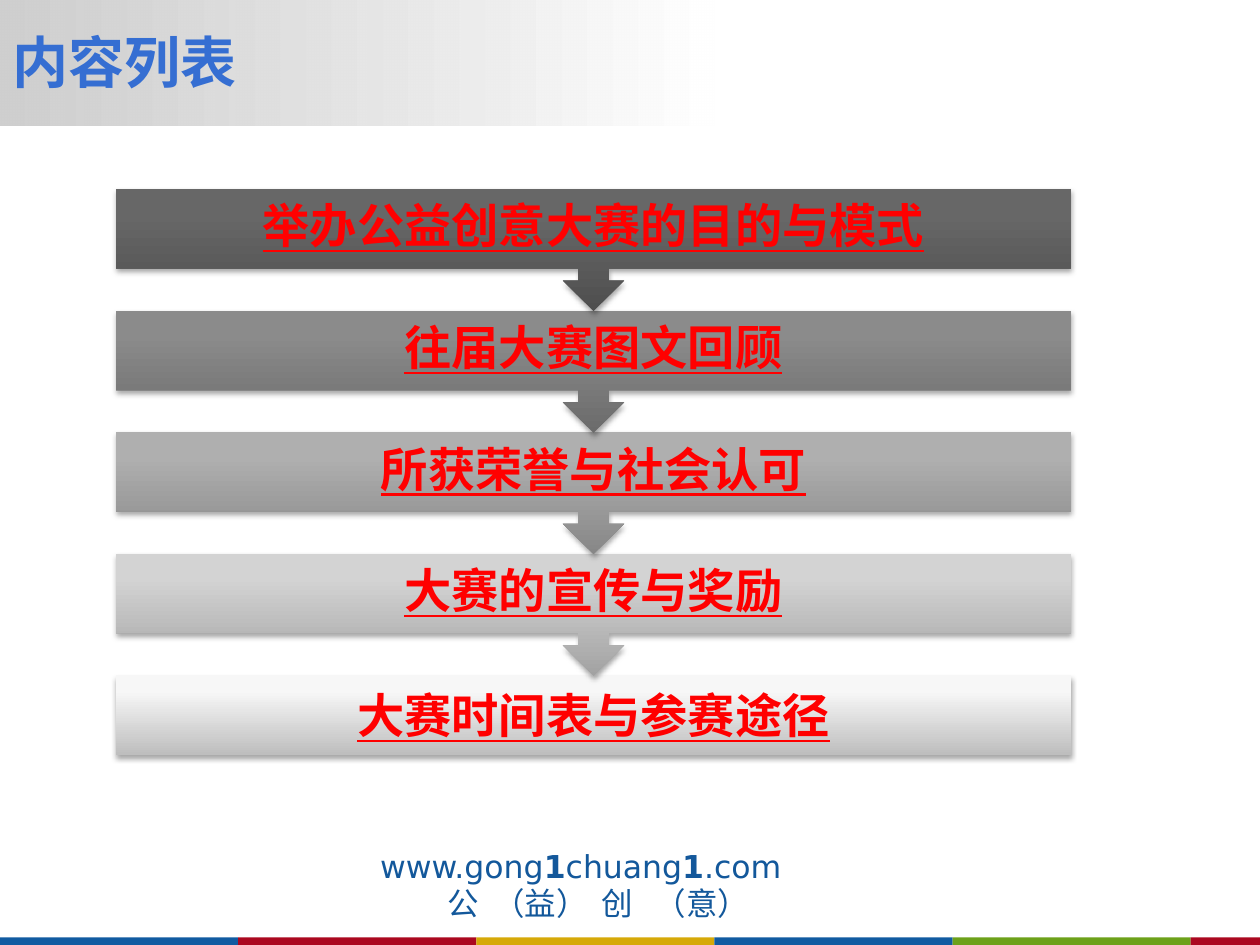
from dataclasses import dataclass

import pptx
import pptx.dml.color
import pptx.enum.shapes
import pptx.enum.text
import pptx.oxml
import pptx.oxml.ns
import pptx.util
from pptx.util import Inches

COLORS = {
    "blue": "115BA1", "red": "AB0820", "gold": "D6A908", "green": "6DA11A",
    "title": "356ED2", "topic": "FF0000", "footer": "13589B",
    "band": "C7C7C7", "white": "FFFFFF", "shadow": "000000",
}
CJK_FONT = "Noto Sans CJK SC"
NAMESPACE = pptx.oxml.ns.nsdecls("a")
SHAPE = pptx.enum.shapes.MSO_SHAPE
ALIGN = pptx.enum.text.PP_ALIGN
ANCHOR = pptx.enum.text.MSO_ANCHOR

TOPIC_LEFT, TOPIC_TOP, TOPIC_WIDTH = 0.92, 1.5, 7.58
TOPIC_PITCH = 0.965
BOX_HEIGHT, CALLOUT_HEIGHT = 0.63, 0.97
STRIPE_WIDTH = 1.89


@dataclass
class Topic:
    text: str
    dark: str
    middle: str
    light: str


@dataclass
class Span:
    text: str
    bold: bool = False
    spacing: int = 0  # hundredths of a point


TOPICS = [
    Topic("举办公益创意大赛的目的与模式", "4F4F4F", "676767", "676767"),
    Topic("往届大赛图文回顾", "6B6B6B", "8B8B8B", "8B8B8B"),
    Topic("所获荣誉与社会认可", "878787", "AFAFAF", "B0B0B0"),
    Topic("大赛的宣传与奖励", "A2A2A2", "D3D3D3", "D4D4D4"),
    Topic("大赛时间表与参赛途径", "BEBEBE", "F7F7F7", "F8F8F8"),
]
FOOTER_LINES = [
    [Span("www.gong"), Span("1", bold=True), Span("chuang"),
     Span("1", bold=True), Span(".com")],
    [Span("公"), Span(" ", spacing=400), Span("（益）"), Span(" ", spacing=400),
     Span("创"), Span(" ", spacing=800), Span("（意）")],
]


def add_block(page, kind, left: float, top: float, width: float, height: float):
    """Add a preset shape without outline or inherited shadow."""
    block = page.shapes.add_shape(
        kind, Inches(left), Inches(top), Inches(width), Inches(height))
    block.shadow.inherit = False
    block.line.fill.background()
    return block


def fill_gradient(block, stops: list[tuple], angle: int) -> None:
    """Fill with (position, colour, opacity) stops, unaffected by rotation."""
    block.fill.background()
    stop_xml = "".join(
        f'<a:gs pos="{position * 1000}"><a:srgbClr val="{color}">'
        f'<a:alpha val="{opacity * 1000}"/></a:srgbClr></a:gs>'
        for position, color, opacity in stops)
    gradient = pptx.oxml.parse_xml(
        f'<a:gradFill {NAMESPACE} rotWithShape="0"><a:gsLst>{stop_xml}</a:gsLst>'
        f'<a:lin ang="{angle * 60000}" scaled="0"/></a:gradFill>')
    properties = block._element.spPr
    properties.replace(properties.find(pptx.oxml.ns.qn("a:noFill")), gradient)


def add_shadow(block) -> None:
    effects = block._element.spPr.find(pptx.oxml.ns.qn("a:effectLst"))
    effects.append(pptx.oxml.parse_xml(
        f'<a:outerShdw {NAMESPACE} blurRad="{pptx.util.Pt(3.1)}" '
        f'dist="{pptx.util.Pt(1.8)}" dir="5400000" rotWithShape="0">'
        f'<a:srgbClr val="{COLORS["shadow"]}"><a:alpha val="35000"/></a:srgbClr>'
        '</a:outerShdw>'))


def write_text(para, spans: list[Span], *, size: float, font: str, color: str,
               align=ALIGN.CENTER, bold: bool = False, underline: bool = False,
               line_spacing: float | None = None) -> None:
    para.alignment = align
    if line_spacing:
        para.line_spacing = line_spacing
    for part in spans:
        span = para.add_run()
        span.text = part.text
        span.font.size = pptx.util.Pt(size)
        span.font.name = font
        span.font.bold = bold or part.bold
        span.font.underline = underline
        span.font.color.rgb = pptx.dml.color.RGBColor.from_string(color)
        properties = span._r.get_or_add_rPr()
        if part.spacing:
            properties.set("spc", str(part.spacing))
        properties.append(pptx.oxml.parse_xml(
            f'<a:ea {NAMESPACE} typeface="{CJK_FONT}"/>'))


def add_text_box(page, left: float, top: float, width: float, height: float):
    box = page.shapes.add_textbox(
        Inches(left), Inches(top), Inches(width), Inches(height))
    box.text_frame.word_wrap = True
    return box.text_frame


def draw_stripes(page) -> None:
    names = ["blue", "red", "gold", "blue", "green", "red"]
    for index, name in enumerate(names):
        width = 0.6 if index == len(names) - 1 else STRIPE_WIDTH
        stripe = add_block(page, SHAPE.RECTANGLE, index * STRIPE_WIDTH, 7.44, width, 0.07)
        stripe.fill.solid()
        stripe.fill.fore_color.rgb = pptx.dml.color.RGBColor.from_string(COLORS[name])


def draw_footer(page) -> None:
    frame = add_text_box(page, 1.33, 6.67, 6.56, 1.01)
    for index, spans in enumerate(FOOTER_LINES):
        para = frame.add_paragraph() if index else frame.paragraphs[0]
        write_text(para, spans, size=18, font="DejaVu Sans", color=COLORS["footer"])
    para._p.get_or_add_pPr().set("marL", str(Inches(0.28)))


def draw_topic(page, index: int, topic: Topic) -> None:
    top = TOPIC_TOP + index * TOPIC_PITCH
    is_last = index == len(TOPICS) - 1
    block = add_block(
        page, SHAPE.RECTANGLE if is_last else SHAPE.UP_ARROW_CALLOUT,
        TOPIC_LEFT, top, TOPIC_WIDTH, BOX_HEIGHT if is_last else CALLOUT_HEIGHT)
    block.rotation = 0 if is_last else 180
    fill_gradient(block, [(0, topic.dark, 100), (80, topic.middle, 100),
                          (100, topic.light, 100)], 270)
    add_shadow(block)
    frame = add_text_box(page, TOPIC_LEFT, top, TOPIC_WIDTH, BOX_HEIGHT)
    frame.vertical_anchor = ANCHOR.MIDDLE
    frame.margin_left = frame.margin_right = Inches(0.21)
    frame.margin_top = frame.margin_bottom = Inches(0.21)
    write_text(frame.paragraphs[0], [Span(topic.text)], size=27, font=CJK_FONT,
               color=COLORS["topic"], bold=True, underline=True,
               line_spacing=None if is_last else 0.9)


def draw_title(page) -> None:
    title = page.shapes.title
    title.left, title.top = Inches(0), Inches(0.17)
    title.width, title.height = Inches(5.58), Inches(0.57)
    frame = title.text_frame
    frame.vertical_anchor = ANCHOR.TOP
    frame.auto_size = pptx.enum.text.MSO_AUTO_SIZE.SHAPE_TO_FIT_TEXT
    write_text(frame.paragraphs[0], [Span("内容列表")], size=32, font="Arial",
               color=COLORS["title"], align=ALIGN.LEFT, bold=True)
    page.shapes._spTree.append(title._element)  # in front of the header band


def main() -> None:
    deck = pptx.Presentation()
    deck.slide_width, deck.slide_height = Inches(10), Inches(7.5)
    page = deck.slides.add_slide(deck.slide_layouts[5])
    draw_stripes(page)
    band = add_block(page, SHAPE.RECTANGLE, 0, 0, 5.67, 1)
    fill_gradient(band, [(0, COLORS["band"], 85), (100, COLORS["white"], 100)], 0)
    draw_footer(page)
    for index, topic in reversed(list(enumerate(TOPICS))):
        draw_topic(page, index, topic)
    draw_title(page)
    deck.save("out.pptx")


if __name__ == "__main__":
    main()
